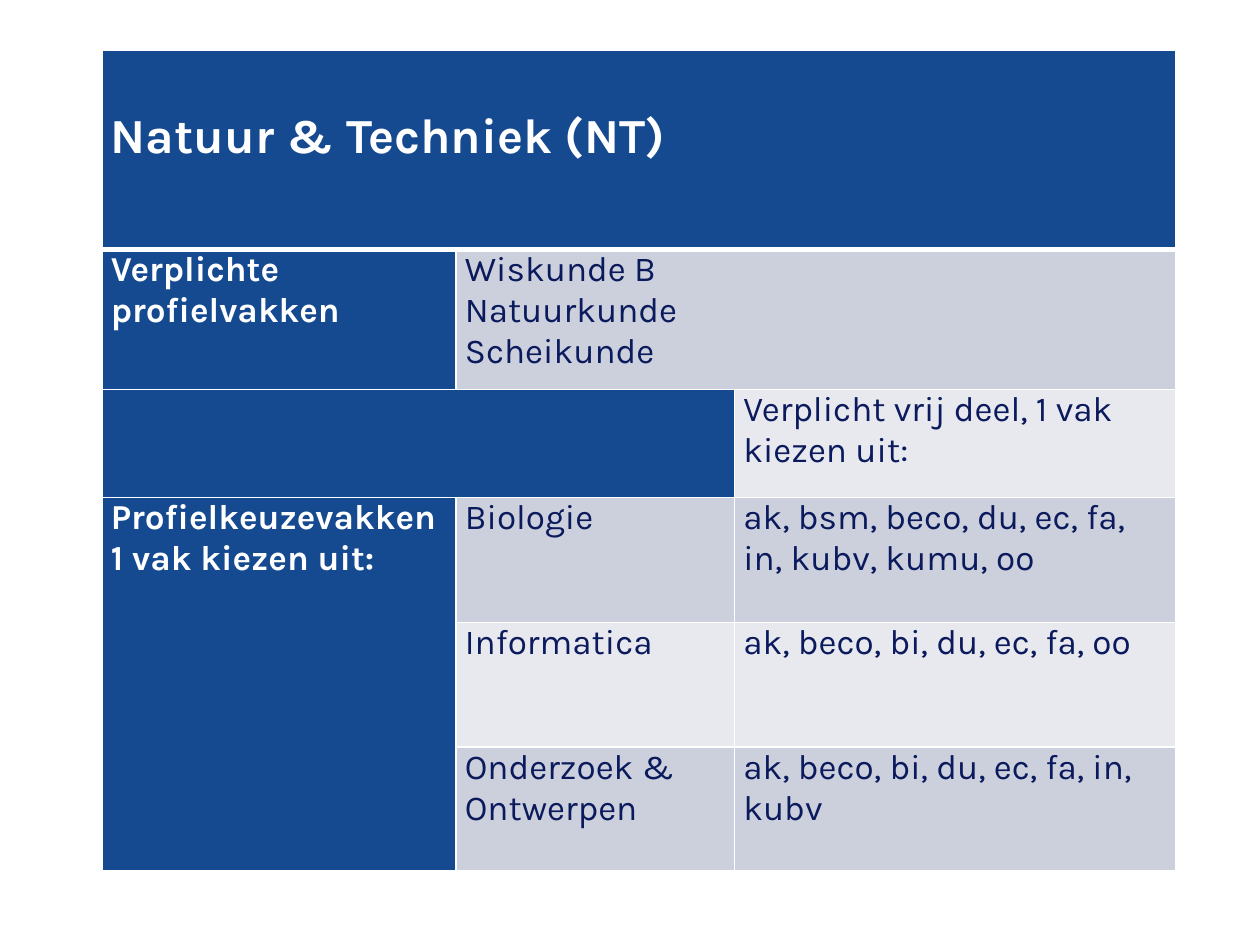
from lxml import etree
from pptx import Presentation
from pptx import util as u
from pptx.dml.color import RGBColor
from pptx.oxml import ns

BLUE = RGBColor(0x15, 0x4A, 0x91)
NAVY = RGBColor(0x0A, 0x1A, 0x5C)
GREY = RGBColor(0xCC, 0xD0, 0xDC)
PALE = RGBColor(0xE8, 0xE9, 0xEE)
WHITE = RGBColor(0xFF, 0xFF, 0xFF)

# Column widths and row heights in grid units
COLS = [28.1, 22.1, 35]
ROWS = [15.8, 11.1, 8.6, 9.9, 9.9, 9.8]


class Deck:
    """Style and current slide; the grid has 100 columns and 75 rows."""
    font = "Karla"
    size = 20

    def __init__(self):
        self.prs = Presentation()
        self.prs.slide_width, self.prs.slide_height = u.Inches(10), u.Inches(7.5)
        self.unit = self.prs.slide_width / 100
        self.slide = self.prs.slides.add_slide(self.prs.slide_layouts[6])

    def grid(self, n):
        return u.Emu(round(n * self.unit))

    def table(self, left, top, cols, rows):
        box = map(self.grid, (left, top, sum(cols), sum(rows)))
        tab = self.slide.shapes.add_table(len(rows), len(cols), *box).table
        tab.first_row = tab.horz_banding = False
        for col, n in zip(tab.columns, cols):
            col.width = self.grid(n)
        for row, n in zip(tab.rows, rows):
            row.height = self.grid(n)
        # White rules, thicker below the heading row
        for r in range(len(rows)):
            for c in range(len(cols)):
                self.rules(tab.cell(r, c), top=3 if r == 1 else 1,
                           base=3 if r == 0 else 1)
        return tab

    def rules(self, cell, top, base):
        props = cell._tc.get_or_add_tcPr()
        for side, pts in zip("LRTB", (1, 1, top, base)):
            line = etree.SubElement(props, ns.qn(f"a:ln{side}"), w=str(u.Pt(pts)))
            fill = etree.SubElement(line, ns.qn("a:solidFill"))
            etree.SubElement(fill, ns.qn("a:srgbClr"), val=str(WHITE))

    def cell(self, tab, row, col, words, fill, span=(1, 1), size=None, inset=0):
        cell = tab.cell(row, col)
        if span != (1, 1):
            cell.merge(tab.cell(row + span[0] - 1, col + span[1] - 1))
        cell.fill.solid()
        cell.fill.fore_color.rgb = fill
        cell.margin_left = cell.margin_right = self.grid(0.7)
        cell.margin_top, cell.margin_bottom = self.grid(inset), 0
        cell.text = words
        for para in cell.text_frame.paragraphs:
            font = para.font
            font.name, font.size = self.font, u.Pt(size or self.size)
            font.bold = fill == BLUE
            font.color.rgb = WHITE if fill == BLUE else NAVY


def main():
    deck = Deck()
    tab = deck.table(8.1, 4, COLS, ROWS)

    # Heading
    deck.cell(tab, 0, 0, "Natuur & Techniek (NT)", BLUE, (1, 3), size=28, inset=4.6)

    # Required subjects
    deck.cell(tab, 1, 0, "Verplichte profielvakken", BLUE)
    deck.cell(tab, 1, 1, "Wiskunde B\nNatuurkunde\nScheikunde", GREY, (1, 2))

    # Heading of the free part
    deck.cell(tab, 2, 0, "", BLUE, (1, 2))
    deck.cell(tab, 2, 2, "Verplicht vrij deel, 1 vak kiezen uit:", PALE)

    # Subjects to choose from
    deck.cell(tab, 3, 0, "Profielkeuzevakken 1 vak kiezen uit:", BLUE, (3, 1))
    picks = [
        ("Biologie", "ak, bsm, beco, du, ec, fa, in, kubv, kumu, oo", GREY),
        ("Informatica", "ak, beco, bi, du, ec, fa, oo", PALE),
        ("Onderzoek & Ontwerpen", "ak, beco, bi, du, ec, fa, in, kubv", GREY),
    ]
    for row, (name, free, fill) in enumerate(picks, 3):
        deck.cell(tab, row, 1, name, fill)
        deck.cell(tab, row, 2, free, fill)

    deck.prs.save("out.pptx")


if __name__ == "__main__":
    main()
